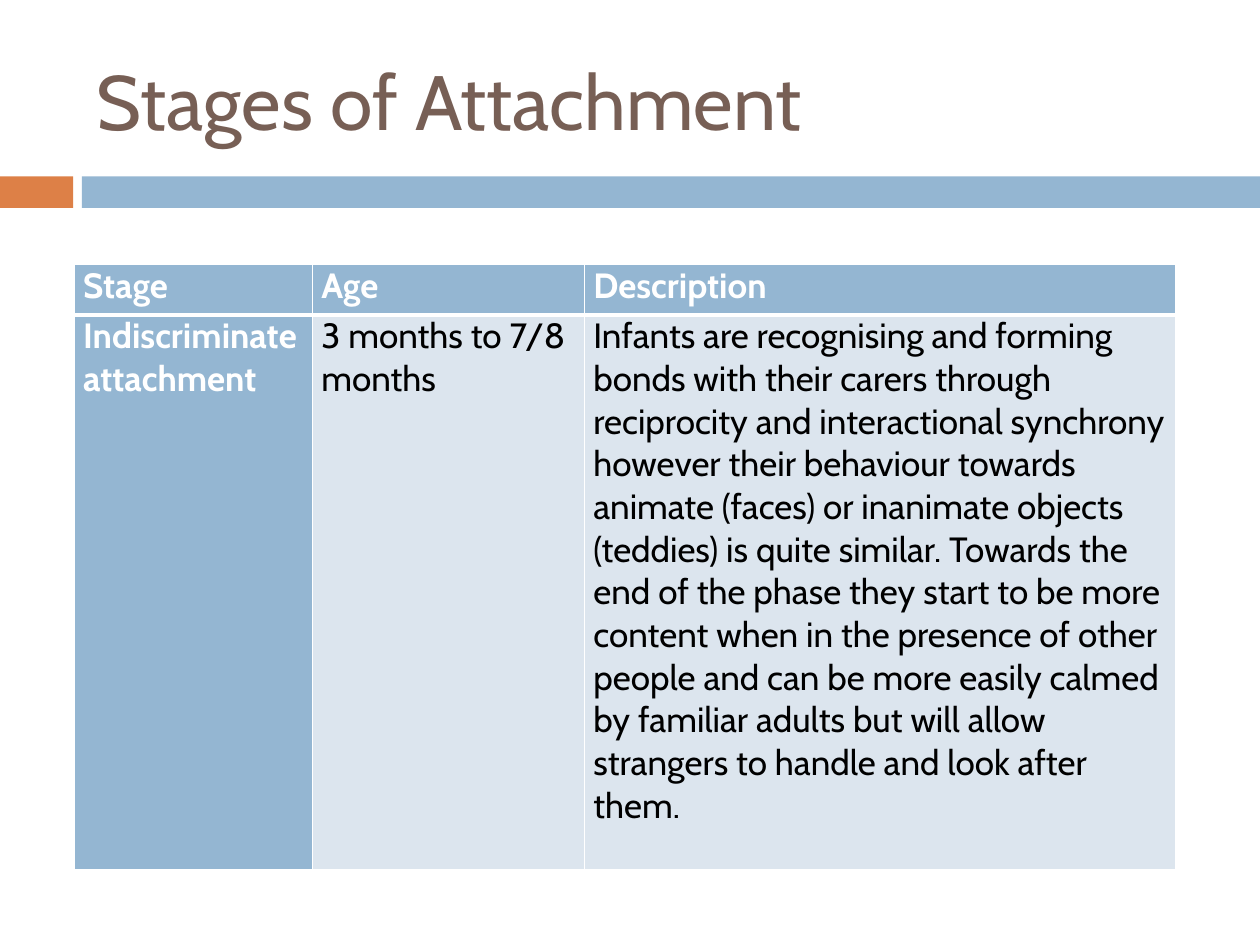
from dataclasses import dataclass

from lxml import etree
from pptx import Presentation
from pptx.dml.color import RGBColor
from pptx.enum.shapes import MSO_SHAPE
from pptx.enum.text import MSO_ANCHOR
from pptx.oxml.ns import qn
from pptx.util import Inches, Pt

RECTANGLE = MSO_SHAPE.RECTANGLE
MIDDLE = MSO_ANCHOR.MIDDLE
SLIDE_WIDTH, SLIDE_HEIGHT = Inches(10), Inches(7.5)


@dataclass(frozen=True)
class Theme:
    font: str = "Cabin"
    title_size: float = 44
    table_size: float = 20
    title: str = "775F55"
    orange: str = "DD8047"
    blue: str = "94B6D2"
    pale: str = "DCE5EE"
    white: str = "FFFFFF"
    black: str = "000000"
    thin_rule: float = 1
    thick_rule: float = 3


@dataclass(frozen=True)
class Box:
    """Left, top, width and height as shares of the slide's size."""
    left: float
    top: float
    width: float
    height: float

    def lengths(self) -> tuple[int, int, int, int]:
        return (int(self.left * SLIDE_WIDTH), int(self.top * SLIDE_HEIGHT),
                int(self.width * SLIDE_WIDTH), int(self.height * SLIDE_HEIGHT))


@dataclass(frozen=True)
class Band:
    left: float
    width: float
    color: str


THEME = Theme()
BAND_TOP, BAND_HEIGHT = 1.4 / 7.5, 0.25 / 7.5
BANDS = (Band(0, 0.058, THEME.orange), Band(0.065, 0.935, THEME.blue))
TITLE_BOX = Box(0.067, 0.25 / 7.5, 0.892, 1.08 / 7.5)
TABLE_BOX = Box(0.059, 0.28, 0.874, 0.64)
COLUMN_SHARES = (0.189, 0.216, 0.469)
ROW_SHARES = (0.4 / 7.5, 4.4 / 7.5)
STAGES = (
    ("Stage", "Age", "Description"),
    ("Indiscriminate attachment", "3 months to 7/8 months",
     "Infants are recognising and forming bonds with their carers through "
     "reciprocity and interactional synchrony however their behaviour towards "
     "animate (faces) or inanimate objects (teddies) is quite similar. Towards "
     "the end of the phase they start to be more content when in the presence "
     "of other people and can be more easily calmed by familiar adults but "
     "will allow strangers to handle and look after them."),
)


def add_run(paragraph, text: str, size: float, color: str, bold: bool = False) -> None:
    run = paragraph.add_run()
    run.text = text
    run.font.name = THEME.font
    run.font.size = Pt(size)
    run.font.bold = bold
    run.font.color.rgb = RGBColor.from_string(color)


def add_band(slide, band: Band) -> None:
    box = Box(band.left, BAND_TOP, band.width, BAND_HEIGHT)
    bar = slide.shapes.add_shape(RECTANGLE, *box.lengths())
    bar.shadow.inherit = False
    bar.fill.solid()
    bar.fill.fore_color.rgb = RGBColor.from_string(band.color)
    bar.line.fill.background()


def add_title(slide, text: str) -> None:
    frame = slide.shapes.add_textbox(*TITLE_BOX.lengths()).text_frame
    frame.word_wrap = True
    frame.vertical_anchor = MIDDLE
    add_run(frame.paragraphs[0], text, THEME.title_size, THEME.title)


def set_borders(cell, top: float, bottom: float) -> None:
    properties = cell._tc.get_or_add_tcPr()
    widths = {"a:lnL": THEME.thin_rule, "a:lnR": THEME.thin_rule,
              "a:lnT": top, "a:lnB": bottom}
    for tag, width in widths.items():
        rule = etree.SubElement(properties, qn(tag), w=str(Pt(width)))
        fill = etree.SubElement(rule, qn("a:solidFill"))
        etree.SubElement(fill, qn("a:srgbClr"), val=THEME.white)


def fill_cell(cell, text: str, row: int, column: int) -> None:
    is_heading = row == 0 or column == 0
    # Borders come before the fill in the cell's properties
    set_borders(cell,
                top=THEME.thin_rule if row == 0 else THEME.thick_rule,
                bottom=THEME.thick_rule if row == 0 else THEME.thin_rule)
    cell.fill.solid()
    cell.fill.fore_color.rgb = RGBColor.from_string(
        THEME.blue if is_heading else THEME.pale)
    cell.margin_left = cell.margin_right = Inches(0.07)
    cell.margin_top = cell.margin_bottom = 0
    paragraph = cell.text_frame.paragraphs[0]
    paragraph.space_after = Pt(1.5)
    add_run(paragraph, text, THEME.table_size,
            THEME.white if is_heading else THEME.black, is_heading)


def add_stage_table(slide) -> None:
    table = slide.shapes.add_table(
        len(STAGES), len(COLUMN_SHARES), *TABLE_BOX.lengths()).table
    table.first_col = True
    table.horz_banding = False
    for column, share in zip(table.columns, COLUMN_SHARES):
        column.width = int(share * SLIDE_WIDTH)
    for row, share in zip(table.rows, ROW_SHARES):
        row.height = int(share * SLIDE_HEIGHT)
    for row, texts in enumerate(STAGES):
        for column, text in enumerate(texts):
            fill_cell(table.cell(row, column), text, row, column)


def main() -> None:
    deck = Presentation()
    deck.slide_width, deck.slide_height = SLIDE_WIDTH, SLIDE_HEIGHT
    slide = deck.slides.add_slide(deck.slide_layouts[6])

    # Coloured bands under the title
    for band in BANDS:
        add_band(slide, band)

    # Title and table
    add_title(slide, "Stages of Attachment")
    add_stage_table(slide)
    deck.save("out.pptx")


if __name__ == "__main__":
    main()
